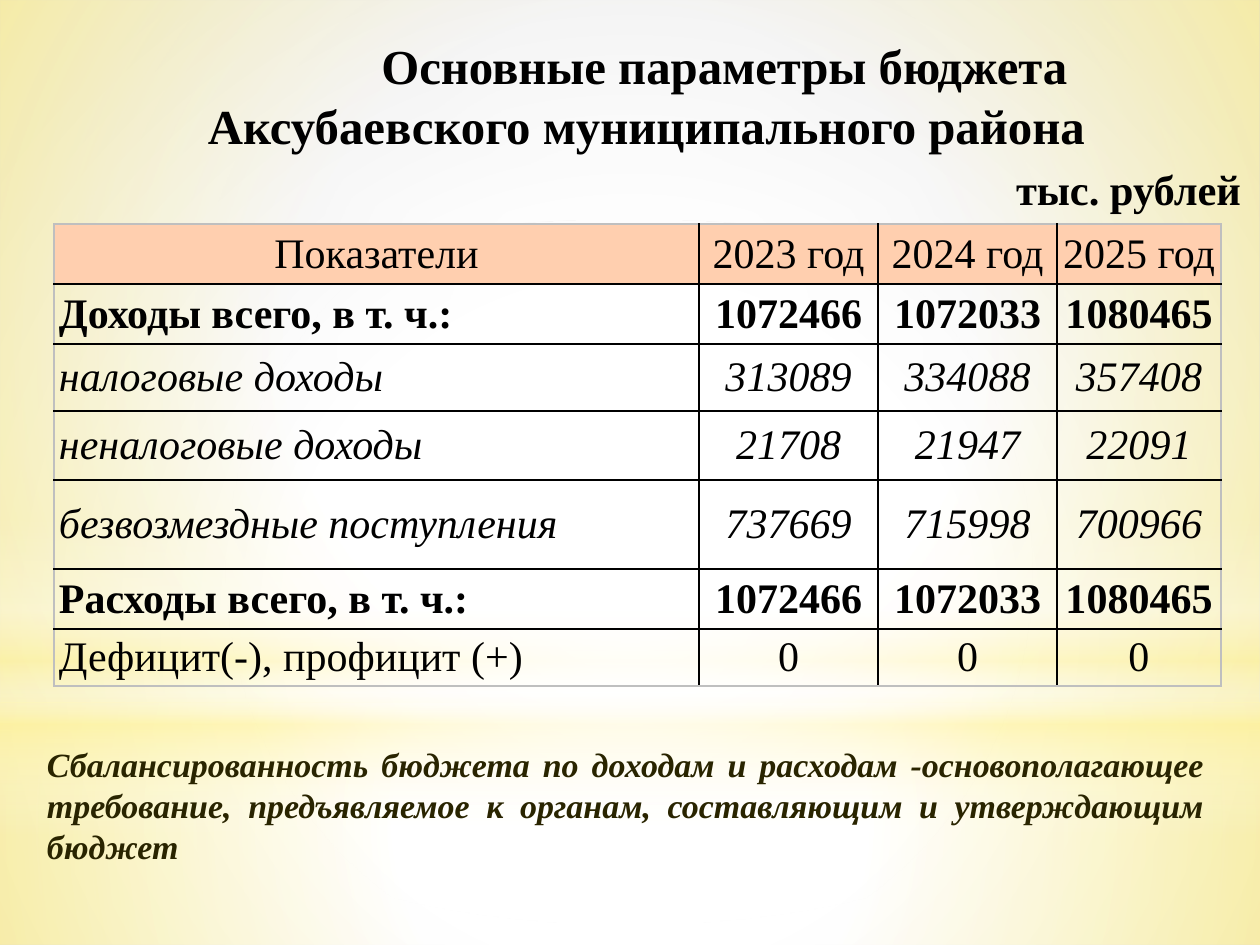
"""Build the district budget slide: headline, indicator table and closing note."""
from lxml import etree
from pptx import Presentation
from pptx.dml.color import RGBColor
from pptx.enum.shapes import MSO_SHAPE
from pptx.enum.text import MSO_ANCHOR, MSO_AUTO_SIZE, PP_ALIGN
from pptx.oxml.ns import qn
from pptx.util import Emu, Pt

RECTANGLE, OVAL = MSO_SHAPE.RECTANGLE, MSO_SHAPE.OVAL
LEFT, CENTER, RIGHT, JUSTIFY = PP_ALIGN.LEFT, PP_ALIGN.CENTER, PP_ALIGN.RIGHT, PP_ALIGN.JUSTIFY
TOP, MIDDLE = MSO_ANCHOR.TOP, MSO_ANCHOR.MIDDLE
PX = 914400 / 126
FONT = "Times New Roman"
COLORS = {"text": "000000", "note": "292400", "header": "FFCFAF", "white": "FFFFFF",
          "gray": "D1D1D1", "yellow": "FFF39D", "grid": "000000", "frame": "BFBFBF"}


def paint_gradient(fill, element, stops, focus=None):
    fill.gradient()
    gradient = element.find(".//" + qn("a:gradFill"))
    gradient.clear()
    stop_list = etree.SubElement(gradient, qn("a:gsLst"))
    for position, name, opacity in stops:
        stop = etree.SubElement(stop_list, qn("a:gs"), pos=str(position * 1000))
        color = etree.SubElement(stop, qn("a:srgbClr"), val=COLORS[name])
        etree.SubElement(color, qn("a:alpha"), val=str(opacity * 1000))
    if focus:
        radial = etree.SubElement(gradient, qn("a:path"), path="circle")
        sides = {side: str(share * 1000) for side, share in zip("ltrb", focus)}
        etree.SubElement(radial, qn("a:fillToRect"), **sides)
    else:
        etree.SubElement(gradient, qn("a:lin"), ang="5400000", scaled="0")


def write(para, text, size, align, color="text", bold=False, italic=False):
    para.alignment = align
    span = para.add_run()
    span.text = text
    font = span.font
    font.name, font.size, font.bold, font.italic = FONT, Pt(size), bold, italic
    font.color.rgb = RGBColor.from_string(COLORS[color])


deck = Presentation()
deck.slide_width, deck.slide_height = Emu(int(1260 * PX)), Emu(int(945 * PX))
page = deck.slides.add_slide(deck.slide_layouts[5])

paint_gradient(page.background.fill, page.element,
               [(0, "white", 100), (42, "white", 100), (100, "gray", 100)], (24, 44, 24, 12))
MIDPOINT = (50, 50, 50, 50)
backdrops = [
    (RECTANGLE, 703, 242, MIDPOINT, [(0, "white", 91), (37, "white", 76), (100, "yellow", 79)]),
    (RECTANGLE, 0, 703, MIDPOINT, [(0, "white", 89), (48, "white", 62), (100, "yellow", 79)]),
    (RECTANGLE, 519, 315, None, [(0, "white", 0), (29, "white", 30), (45, "yellow", 40),
                                 (55, "white", 26), (65, "yellow", 60), (100, "white", 0)]),
    (OVAL, 220, 703, MIDPOINT, [(0, "white", 100), (56, "white", 0)]),
]
for kind, top, height, focus, stops in backdrops:
    backdrop = page.shapes.add_shape(kind, 0, int(top * PX), deck.slide_width, int(height * PX))
    backdrop.shadow.inherit = False
    backdrop.line.fill.background()
    paint_gradient(backdrop.fill, backdrop.element, stops, focus)

title = page.shapes.title
title.element.getparent().append(title.element)
title.left, title.top, title.width, title.height = [int(n * PX) for n in (194, 28, 1066, 179)]
frame = title.text_frame
frame.word_wrap, frame.auto_size, frame.vertical_anchor = True, MSO_AUTO_SIZE.NONE, TOP
frame.margin_left, frame.margin_right = int(14 * PX), int(19 * PX)
frame.margin_top = frame.margin_bottom = int(6 * PX)
headline = [("Основные параметры бюджета", 27.9, CENTER),
            ("Аксубаевского муниципального района", 27.9, LEFT),
            ("тыс. рублей", 24.3, RIGHT)]
for index, (text, size, align) in enumerate(headline):
    para = frame.add_paragraph() if index else frame.paragraphs[0]
    para.line_spacing = Emu(int(60 * PX))
    write(para, text, size, align, bold=True)

rows = [
    (60, "", ["Показатели", "2023 год", "2024 год", "2025 год"]),
    (60, "bold", ["Доходы всего, в т. ч.:", "1072466", "1072033", "1080465"]),
    (67, "italic", ["налоговые доходы", "313089", "334088", "357408"]),
    (69, "italic", ["неналоговые доходы", "21708", "21947", "22091"]),
    (89, "italic", ["безвозмездные поступления", "737669", "715998", "700966"]),
    (60, "bold", ["Расходы всего, в т. ч.:", "1072466", "1072033", "1080465"]),
    (57, "", ["Дефицит(-), профицит (+)", "0", "0", "0"]),
]
widths = [645, 179, 179, 164]
table_height = sum(row[0] for row in rows)
table = page.shapes.add_table(len(rows), len(widths), int(54 * PX), int(224 * PX),
                              int(sum(widths) * PX), int(table_height * PX)).table
table.first_row = table.horz_banding = False
for column, width in zip(table.columns, widths):
    column.width = int(width * PX)
for r, (height, style, texts) in enumerate(rows):
    table.rows[r].height = int(height * PX)
    for c, text in enumerate(texts):
        cell = table.cell(r, c)
        cell.vertical_anchor = MIDDLE
        cell.margin_left = cell.margin_right = int(5 * PX)
        cell.margin_top = cell.margin_bottom = 0
        outer = {"L": c == 0, "R": c == len(widths) - 1, "T": r == 0, "B": r == len(rows) - 1}
        for side, is_outer in outer.items():
            border = etree.SubElement(cell._tc.get_or_add_tcPr(), qn("a:ln" + side), w="12700")
            solid = etree.SubElement(border, qn("a:solidFill"))
            shade = COLORS["frame" if is_outer else "grid"]
            etree.SubElement(solid, qn("a:srgbClr"), val=shade)
        if r == 0:
            cell.fill.solid()
            cell.fill.fore_color.rgb = RGBColor.from_string(COLORS["header"])
        else:
            cell.fill.background()
        write(cell.text_frame.paragraphs[0], text, 24, LEFT if r and c == 0 else CENTER,
              bold=style == "bold", italic=style == "italic")

note = page.shapes.add_textbox(*[int(n * PX) for n in (35, 701, 1187, 159)])
frame = note.text_frame
frame.word_wrap = True
frame.margin_left, frame.margin_right, frame.margin_top = int(12 * PX), int(16 * PX), int(42 * PX)
para = frame.paragraphs[0]
para.line_spacing = Emu(int(41 * PX))
write(para, "Сбалансированность бюджета по доходам и расходам -основополагающее требование, "
      "предъявляемое к органам, составляющим и утверждающим бюджет",
      19.4, JUSTIFY, "note", bold=True, italic=True)

deck.save("out.pptx")
